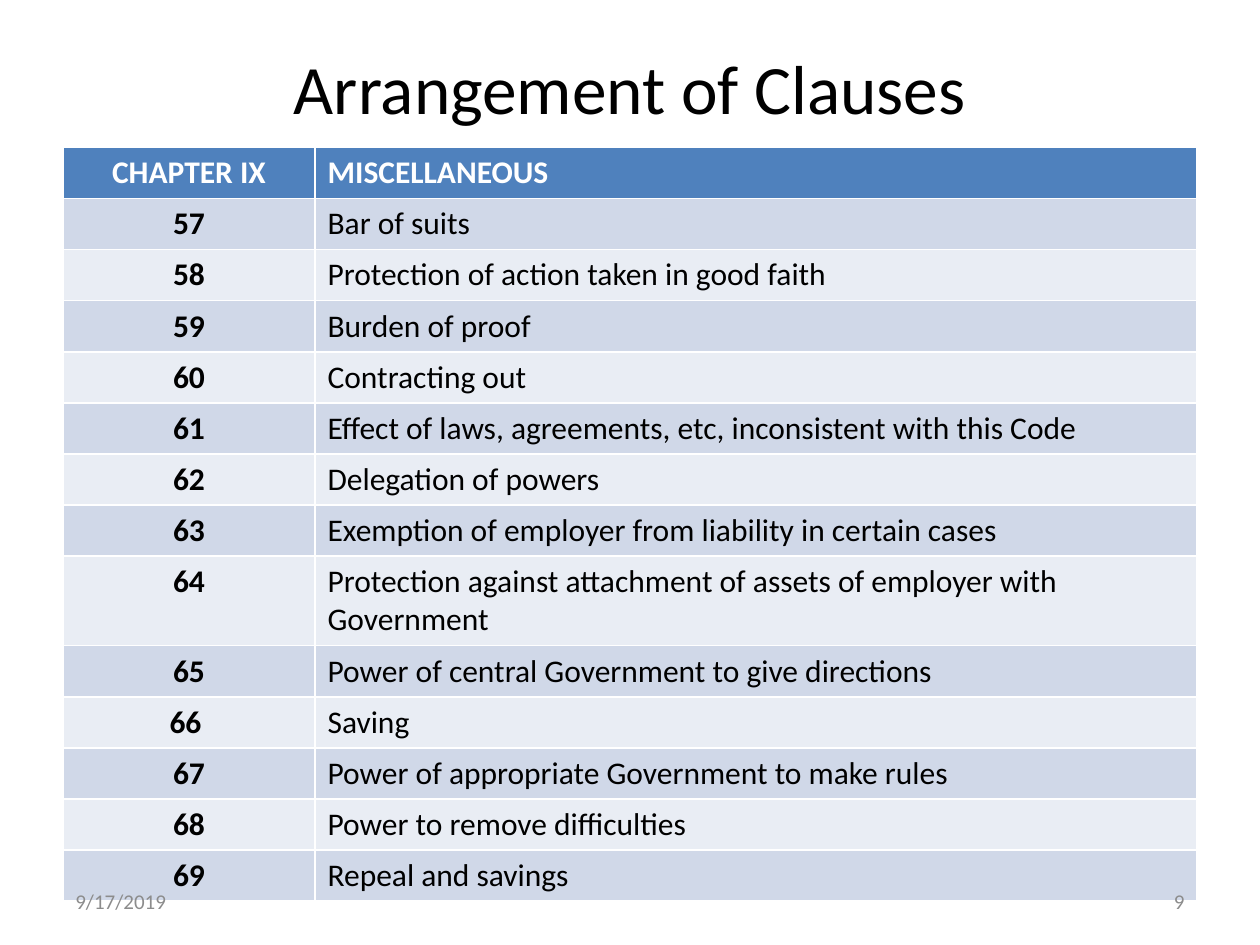
from pptx import Presentation
from pptx import util as u
from pptx.dml.color import RGBColor
from pptx.enum import text

FONT = "Calibri"
BLACK = RGBColor(0x00, 0x00, 0x00)
WHITE = RGBColor(0xFF, 0xFF, 0xFF)
GREY = RGBColor(0x8C, 0x8C, 0x8C)
HEADER_BLUE = RGBColor(0x4F, 0x81, 0xBD)
BANDS = (RGBColor(0xD0, 0xD8, 0xE8), RGBColor(0xE9, 0xED, 0xF4))

TITLE_ONLY = 5
MARGIN = u.Inches(0.5)
CONTENT_WIDTH = u.Inches(9)
COLUMN_SHARES = (2, 7)
ROW_HEIGHT = u.Inches(0.4)

CLAUSES = [
    ("CHAPTER IX", "MISCELLANEOUS"),
    ("57", "Bar of suits"),
    ("58", "Protection of action taken in good faith"),
    ("59", "Burden of proof"),
    ("60", "Contracting out"),
    ("61", "Effect of laws, agreements, etc, inconsistent with this Code"),
    ("62", "Delegation of powers"),
    ("63", "Exemption of employer from liability in certain cases"),
    ("64", "Protection against attachment of assets of employer with Government"),
    ("65", "Power of central Government to give directions"),
    ("66 ", "Saving"),
    ("67", "Power of appropriate Government to make rules"),
    ("68", "Power to remove difficulties"),
    ("69", "Repeal and savings"),
]


def write(text_frame, words, size, color, align, bold=False):
    """Put one formatted paragraph into a text frame."""
    text_frame.text = words
    paragraph = text_frame.paragraphs[0]
    paragraph.alignment = align
    font = paragraph.runs[0].font
    font.name, font.size, font.bold = FONT, u.Pt(size), bold
    font.color.rgb = color


def add_title(slide, left, top, width, height):
    """Fill and place the title placeholder."""
    title = slide.shapes.title
    title.left, title.top, title.width, title.height = left, top, width, height
    title.text_frame.vertical_anchor = text.MSO_ANCHOR.MIDDLE
    write(title.text_frame, "Arrangement of Clauses", 39.6, BLACK, text.PP_ALIGN.CENTER)


def add_clause_table(slide, left, top, width):
    """Add the banded table of clause numbers and headings."""
    table = slide.shapes.add_table(
        len(CLAUSES), len(COLUMN_SHARES), left, top, width, ROW_HEIGHT * len(CLAUSES)
    ).table
    for column, share in zip(table.columns, COLUMN_SHARES):
        column.width = width * share // sum(COLUMN_SHARES)
    for row_index, clause in enumerate(CLAUSES):
        is_header = row_index == 0
        fill = HEADER_BLUE if is_header else BANDS[(row_index - 1) % 2]
        for column_index, words in enumerate(clause):
            is_number = column_index == 0
            cell = table.cell(row_index, column_index)
            cell.fill.solid()
            cell.fill.fore_color.rgb = fill
            write(
                cell.text_frame,
                words,
                18,
                WHITE if is_header else BLACK,
                text.PP_ALIGN.CENTER if is_number else text.PP_ALIGN.LEFT,
                bold=is_header or is_number,
            )


def add_footer(slide, left, top, width, height):
    """Add the date at the left end and the slide number at the right end."""
    box_width = u.Inches(2.33)
    footers = (
        ("9/17/2019", left, text.PP_ALIGN.LEFT),
        ("9", left + width - box_width, text.PP_ALIGN.RIGHT),
    )
    for words, box_left, align in footers:
        text_frame = slide.shapes.add_textbox(box_left, top, box_width, height).text_frame
        text_frame.word_wrap = True
        text_frame.vertical_anchor = text.MSO_ANCHOR.MIDDLE
        write(text_frame, words, 12, GREY, align)


def main():
    """Build and save the presentation."""
    presentation = Presentation()
    presentation.slide_width = u.Inches(10)
    presentation.slide_height = u.Inches(7.5)
    slide = presentation.slides.add_slide(presentation.slide_layouts[TITLE_ONLY])
    add_title(slide, MARGIN, u.Inches(0.3), CONTENT_WIDTH, u.Inches(0.78))
    add_clause_table(slide, MARGIN, u.Inches(1.17), CONTENT_WIDTH)
    add_footer(slide, MARGIN, u.Inches(6.95), CONTENT_WIDTH, u.Inches(0.4))
    presentation.save("out.pptx")


if __name__ == "__main__":
    main()
